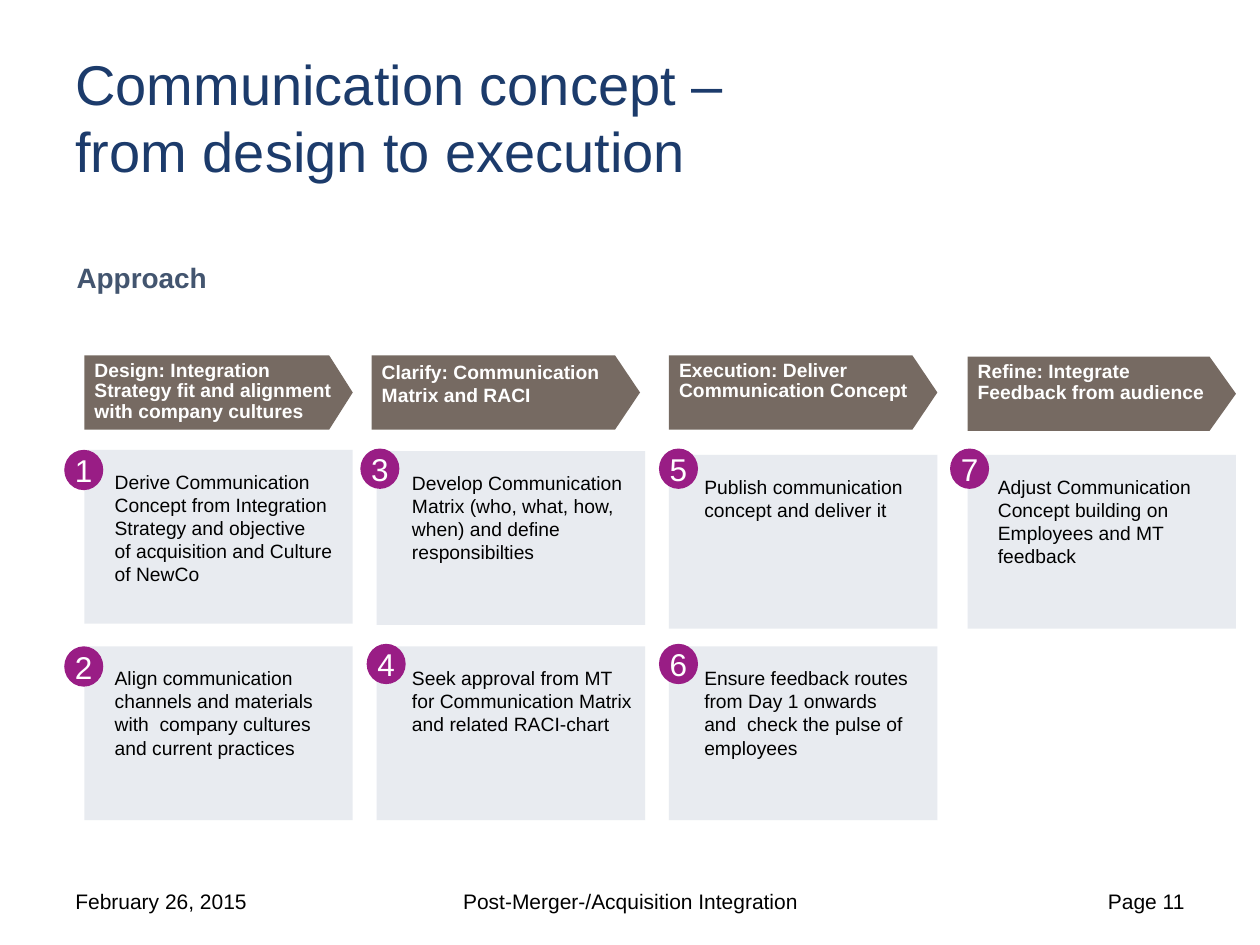
"""Build the communication concept slide: four phases with numbered steps."""
from copy import deepcopy

from lxml.etree import SubElement
from pptx import Presentation
from pptx.dml.color import RGBColor
from pptx.enum.shapes import MSO_SHAPE
from pptx.enum.text import MSO_ANCHOR, PP_ALIGN
from pptx.oxml.ns import qn
from pptx.util import Inches, Pt

NAVY = RGBColor(0x1C, 0x3B, 0x6B)
SLATE = RGBColor(0x43, 0x55, 0x6F)
TAUPE = RGBColor(0x76, 0x6A, 0x62)
PALE = RGBColor(0xD6, 0xDC, 0xE6)
PURPLE = RGBColor(0x99, 0x1D, 0x85)
WHITE = RGBColor(0xFF, 0xFF, 0xFF)
BLACK = RGBColor(0, 0, 0)

COL_W, PHASE_H, CARD_H = 2.13, 0.59, 1.38
BADGE_W, BADGE_H = 0.31, 0.32

TITLE = "Communication concept –\nfrom design to execution"
PHASES = [
    ("Design: Integration Strategy fit and alignment with company cultures",
     0.67, 2.82, 0.317, 0.9),
    ("Clarify: Communication\nMatrix and RACI", 2.95, 2.82, 0.336, 1.0),
    ("Execution: Deliver Communication Concept", 5.31, 2.82, 0.336, 0.9),
    ("Refine: Integrate Feedback from audience", 7.68, 2.83, 0.356, 0.9),
]
STEPS = [
    ("Derive Communication Concept from Integration Strategy and objective\n"
     "of acquisition and Culture\nof NewCo", (0.67, 3.57), (0.51, 3.57), 0.24),
    ("Align communication channels and materials with  company cultures "
     "and current practices", (0.67, 5.13), (0.51, 5.13), 0.24),
    ("Develop Communication Matrix (who, what, how, when) and define "
     "responsibilties", (2.99, 3.58), (2.86, 3.56), 0.28),
    ("Seek approval from MT for Communication Matrix and related RACI-chart",
     (2.99, 5.13), (2.91, 5.11), 0.28),
    ("Publish communication concept and deliver it",
     (5.31, 3.61), (5.23, 3.56), 0.28),
    ("Ensure feedback routes from Day 1 onwards\n"
     "and  check the pulse of employees", (5.31, 5.13), (5.23, 5.11), 0.28),
    ("Adjust Communication Concept building on Employees and MT feedback",
     (7.68, 3.61), (7.54, 3.56), 0.24),
]
FOOTERS = [
    ("February 26, 2015", 0.5, 2.33, PP_ALIGN.LEFT),
    ("Post-Merger-/Acquisition Integration", 3.42, 3.17, PP_ALIGN.CENTER),
    ("Page 11", 7.17, 2.33, PP_ALIGN.RIGHT),
]


def write(sp, text, size=11, color=BLACK, bold=False, align=PP_ALIGN.LEFT,
          anchor=MSO_ANCHOR.TOP, insets=(0.1, 0.05, 0.1, 0.05), wrap=True,
          spacing=1.0):
    tf = sp.text_frame
    tf.word_wrap = wrap
    tf.vertical_anchor = anchor
    (tf.margin_left, tf.margin_top,
     tf.margin_right, tf.margin_bottom) = map(Inches, insets)
    p = tf.paragraphs[0]
    p.text = text
    p.alignment = align
    p.line_spacing = spacing
    for r in p.runs:
        r.font.name = "Arial"
        r.font.size = Pt(size)
        r.font.bold = bold
        r.font.color.rgb = color
    for br in p._p.findall(qn("a:br")):
        br.append(deepcopy(p.runs[0]._r.rPr))


def add_box(s, *at):
    return s.shapes.add_textbox(*map(Inches, at))


def add_filled(s, kind, color, *at):
    sp = s.shapes.add_shape(kind, *map(Inches, at))
    sp.shadow.inherit = False
    sp.fill.solid()
    sp.fill.fore_color.rgb = color
    sp.line.fill.background()
    return sp


def add_phase(s, text, x, y, point, spacing):
    sp = add_filled(s, MSO_SHAPE.PENTAGON, TAUPE, x, y, COL_W, PHASE_H)
    sp.adjustments[0] = point
    write(sp, text, color=WHITE, bold=True, insets=(0.08, 0.04, 0, 0),
          spacing=spacing)


def add_step(s, number, text, card_at, badge_at, inset):
    card = add_filled(s, MSO_SHAPE.RECTANGLE, PALE, *card_at, COL_W, CARD_H)
    color = card._element.spPr.find(qn("a:solidFill"))[0]
    SubElement(color, qn("a:alpha"), val="56000")
    write(card, text, insets=(inset, 0.16, 0.1, 0.05))
    badge = add_filled(s, MSO_SHAPE.OVAL, PURPLE, *badge_at, BADGE_W, BADGE_H)
    write(badge, str(number), size=18, color=WHITE, align=PP_ALIGN.CENTER,
          anchor=MSO_ANCHOR.MIDDLE, wrap=False)


def main():
    prs = Presentation()
    prs.slide_width, prs.slide_height = Inches(10), Inches(7.5)
    s = prs.slides.add_slide(prs.slide_layouts[6])
    write(add_box(s, 0.5, 0.3, 9, 1.25), TITLE, size=32, color=NAVY,
          anchor=MSO_ANCHOR.MIDDLE)
    write(add_box(s, 0.51, 2.02, 2.27, 0.37), "Approach", size=16,
          color=SLATE, bold=True)
    for phase in PHASES:
        add_phase(s, *phase)
    for number, step in enumerate(STEPS, 1):
        add_step(s, number, *step)
    for text, x, w, align in FOOTERS:
        write(add_box(s, x, 6.95, w, 0.4), text, size=12, align=align,
              anchor=MSO_ANCHOR.MIDDLE)
    prs.save("out.pptx")


if __name__ == "__main__":
    main()
